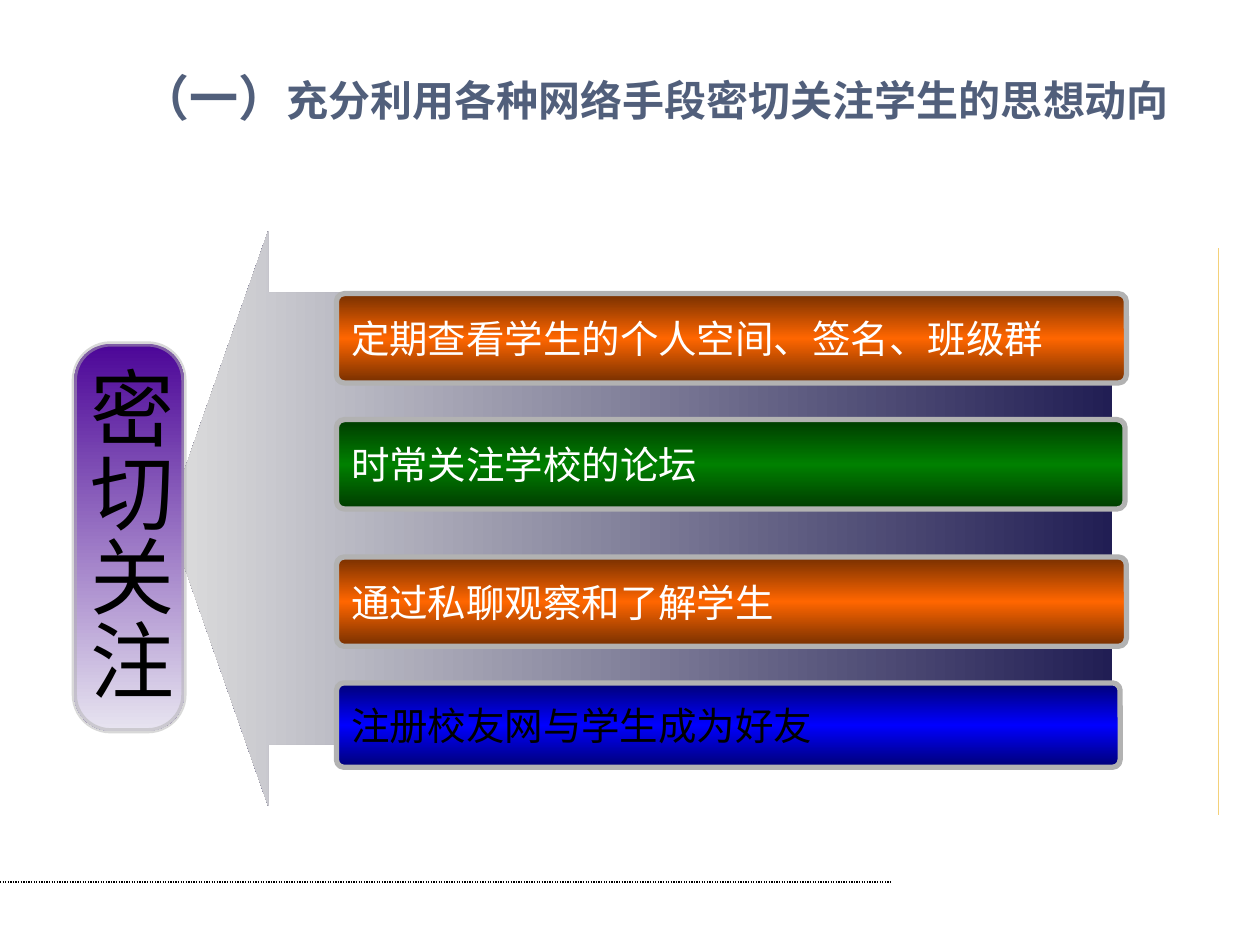
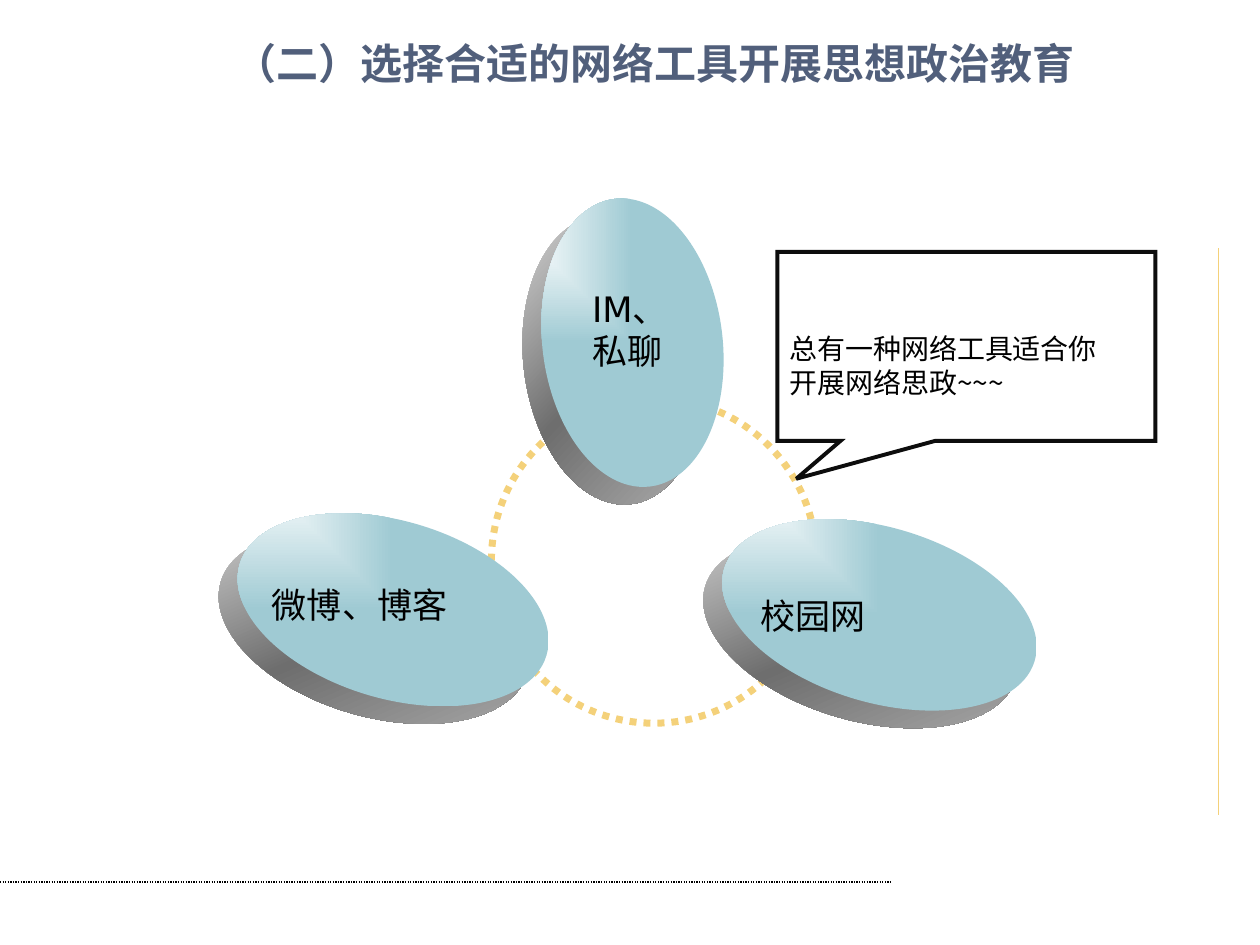
from lxml import etree
from pptx import Presentation
from pptx import util as u
from pptx.dml import color
from pptx.enum import dml, shapes, text
from pptx.oxml import ns

Inches = u.Inches
CJK = "Noto Sans CJK SC"
LABEL_FONT = "DejaVu Sans"
TITLE_COLOR, GOLD, BORDER = "515F7B", "F4D17A", "B2B2B2"
BLACK, WHITE = "000000", "FFFFFF"
ORANGE = ("762F00", "FF6600", "762F00")
GREEN = ("003B00", "008000", "003B00")
BLUE = ("000076", "0000FF", "000076")
DISC_FACE = (WHITE, "9FCAD3")
DISC_EDGE = ("E0E0E0", "6E6E6E", "B4B4B4")
DISC_DEPTH = (-0.15, 0.14)


def rgb(value):
    return color.RGBColor.from_string(value)


def child(parent, tag, **attributes):
    return etree.SubElement(parent, ns.qn(tag), {k: str(v) for k, v in attributes.items()})


def gradient_fill(shape, colors, angle=None):
    """Evenly spaced stops; without an angle they spread from the top left corner."""
    shape.fill.background()
    old_fill = shape._element.spPr.find(ns.qn("a:noFill"))
    fill = etree.Element(ns.qn("a:gradFill"), rotWithShape="1")
    stops = child(fill, "a:gsLst")
    for index, value in enumerate(colors):
        stop = child(stops, "a:gs", pos=index * 100000 // (len(colors) - 1))
        child(stop, "a:srgbClr", val=value)
    if angle is None:
        corner = child(fill, "a:path", path="rect")
        child(corner, "a:fillToRect", r=100000, b=100000)
    else:
        child(fill, "a:lin", ang=angle * 60000, scaled=0)
    old_fill.getparent().replace(old_fill, fill)


def style_line(line, value, width, dash=None):
    line.color.rgb = rgb(value)
    line.width = u.Pt(width)
    if dash:
        line.dash_style = dash


def add_run(paragraph, words, size, value, font=CJK, bold=False):
    run = paragraph.add_run()
    run.text = words
    run.font.size = u.Pt(size)
    run.font.name = font
    run.font.bold = bold
    run.font.color.rgb = rgb(value)
    child(run._r.get_or_add_rPr(), "a:ea", typeface=font)


def prepare_text(shape, anchor=text.MSO_ANCHOR.MIDDLE, align=text.PP_ALIGN.LEFT):
    frame = shape.text_frame
    frame.word_wrap = True
    frame.vertical_anchor = anchor
    frame.paragraphs[0].alignment = align
    return frame


def add_preset(slide, kind, box):
    shape = slide.shapes.add_shape(kind, *map(Inches, box))
    shape.shadow.inherit = False
    return shape


def add_rule(slide, start, end, value, dash=None):
    rule = slide.shapes.add_connector(shapes.MSO_CONNECTOR.STRAIGHT, *map(Inches, start + end))
    style_line(rule.line, value, 0.75, dash)
    child(rule._element.spPr, "a:effectLst")


def start_slide(presentation, title_top, title_runs):
    """Slide with the shared rules and a centred title."""
    slide = presentation.slides.add_slide(presentation.slide_layouts[6])
    add_rule(slide, (0, 7), (7.08, 7), BLACK, dml.MSO_LINE.ROUND_DOT)
    add_rule(slide, (9.67, 1.97), (9.67, 6.47), GOLD)
    title = slide.shapes.add_textbox(*map(Inches, (0.67, title_top, 9.05, 0.5)))
    frame = prepare_text(title, align=text.PP_ALIGN.CENTER)
    for words, size in title_runs:
        add_run(frame.paragraphs[0], words, size, TITLE_COLOR, bold=True)
    return slide


# Slide 1: arrow with bars
def add_bar(slide, box, words, colors, text_color):
    bar = add_preset(slide, shapes.MSO_SHAPE.ROUNDED_RECTANGLE, box)
    bar.adjustments[0] = 0.09
    gradient_fill(bar, colors, 90)
    style_line(bar.line, BORDER, 3)
    add_run(prepare_text(bar).paragraphs[0], words, 22, text_color)


def add_focus_pill(slide, box, words):
    pill = add_preset(slide, shapes.MSO_SHAPE.ROUNDED_RECTANGLE, box)
    pill.adjustments[0] = 0.33
    gradient_fill(pill, ("4C0698", "E7E4F0"), 90)
    style_line(pill.line, BORDER, 3)
    line_color = pill._element.spPr.find(ns.qn("a:ln")).find(".//" + ns.qn("a:srgbClr"))
    child(line_color, "a:alpha", val=50000)
    frame = prepare_text(pill)
    frame._txBody.bodyPr.set("vert", "eaVert")
    add_run(frame.paragraphs[0], words, 48, BLACK, "Arial")


def add_arrow(slide, box, shaft_height, head_length):
    arrow = add_preset(slide, shapes.MSO_SHAPE.RIGHT_ARROW, box)
    arrow.rotation = 180
    height = box[3]
    arrow.adjustments[0] = shaft_height / height
    arrow.adjustments[1] = head_length / height
    gradient_fill(arrow, ("211E54", "DDDDDD"), 0)
    arrow.line.fill.background()


def build_attention_slide(presentation):
    slide = start_slide(presentation, 0.52,
                        [("（一）", 28), ("充分利用各种网络手段密切关注学生的思想动向", 24)])
    add_arrow(slide, (1.33, 1.83, 7.5, 4.57), shaft_height=3.59, head_length=0.8)
    bars = [
        (2.33, 6.27, 0.71, "定期查看学生的个人空间、签名、班级群", ORANGE, WHITE),
        (3.33, 6.26, 0.71, "时常关注学校的论坛", GREEN, WHITE),
        (4.42, 6.27, 0.71, "通过私聊观察和了解学生", ORANGE, WHITE),
        (5.42, 6.22, 0.67, "注册校友网与学生成为好友", BLUE, BLACK),
    ]
    for top, width, height, words, colors, text_color in bars:
        add_bar(slide, (2.67, top, width, height), words, colors, text_color)
    add_focus_pill(slide, (0.59, 2.73, 0.87, 3.07), "密切关注")


# Slide 2: ring of discs
def add_disc(slide, center, size, tilt):
    """Tilted oval face over an equal grey oval that shows as its thick edge."""
    width, height = size
    for (shift_x, shift_y), colors, angle in ((DISC_DEPTH, DISC_EDGE, 50), ((0, 0), DISC_FACE, None)):
        left = center[0] + shift_x - width / 2
        top = center[1] + shift_y - height / 2
        oval = add_preset(slide, shapes.MSO_SHAPE.OVAL, (left, top, width, height))
        oval.rotation = tilt
        gradient_fill(oval, colors, angle)
        oval.line.fill.background()


def add_label(slide, box, words):
    label = slide.shapes.add_textbox(*map(Inches, box))
    frame = prepare_text(label, text.MSO_ANCHOR.TOP)
    add_run(frame.paragraphs[0], words, 20, BLACK, LABEL_FONT)


def add_callout(slide, box, lines):
    callout = add_preset(slide, shapes.MSO_SHAPE.RECTANGULAR_CALLOUT, box)
    callout.adjustments[0], callout.adjustments[1] = -0.45, 0.7
    callout.fill.background()
    style_line(callout.line, "0D0D0D", 2.25)
    child(callout._element.spPr.find(ns.qn("a:ln")), "a:miter", lim=800000)
    frame = prepare_text(callout)
    frame.margin_top = Inches(0.35)
    for index, words in enumerate(lines):
        paragraph = frame.add_paragraph() if index else frame.paragraphs[0]
        paragraph.alignment = text.PP_ALIGN.LEFT
        add_run(paragraph, words, 16, BLACK)


def build_tools_slide(presentation):
    slide = start_slide(presentation, 0.25, [("（二）选择合适的网络工具开展思想政治教育", 24)])
    ring = add_preset(slide, shapes.MSO_SHAPE.OVAL, (3.9, 3.16, 2.58, 2.58))
    ring.fill.background()
    style_line(ring.line, GOLD, 4, dml.MSO_LINE.ROUND_DOT)
    discs = [
        ((5.02, 2.72), (1.43, 2.3), -7, (4.6, 2.23, 1.02, 0.78), "IM、私聊"),
        ((3.12, 4.84), (2.54, 1.41), 16.5, (2.06, 4.58, 1.61, 0.44), "微博、博客"),
        ((6.98, 4.88), (2.57, 1.39), 16.5, (5.94, 4.67, 1.4, 0.44), "校园网"),
    ]
    for center, size, tilt, label_box, words in discs:
        add_disc(slide, center, size, tilt)
        add_label(slide, label_box, words)
    add_callout(slide, (6.17, 2, 3, 1.5), ["总有一种网络工具适合你", "开展网络思政~~~"])


def main():
    presentation = Presentation()
    presentation.slide_width, presentation.slide_height = Inches(10), Inches(7.5)
    build_attention_slide(presentation)
    build_tools_slide(presentation)
    presentation.save("out.pptx")


if __name__ == "__main__":
    main()
